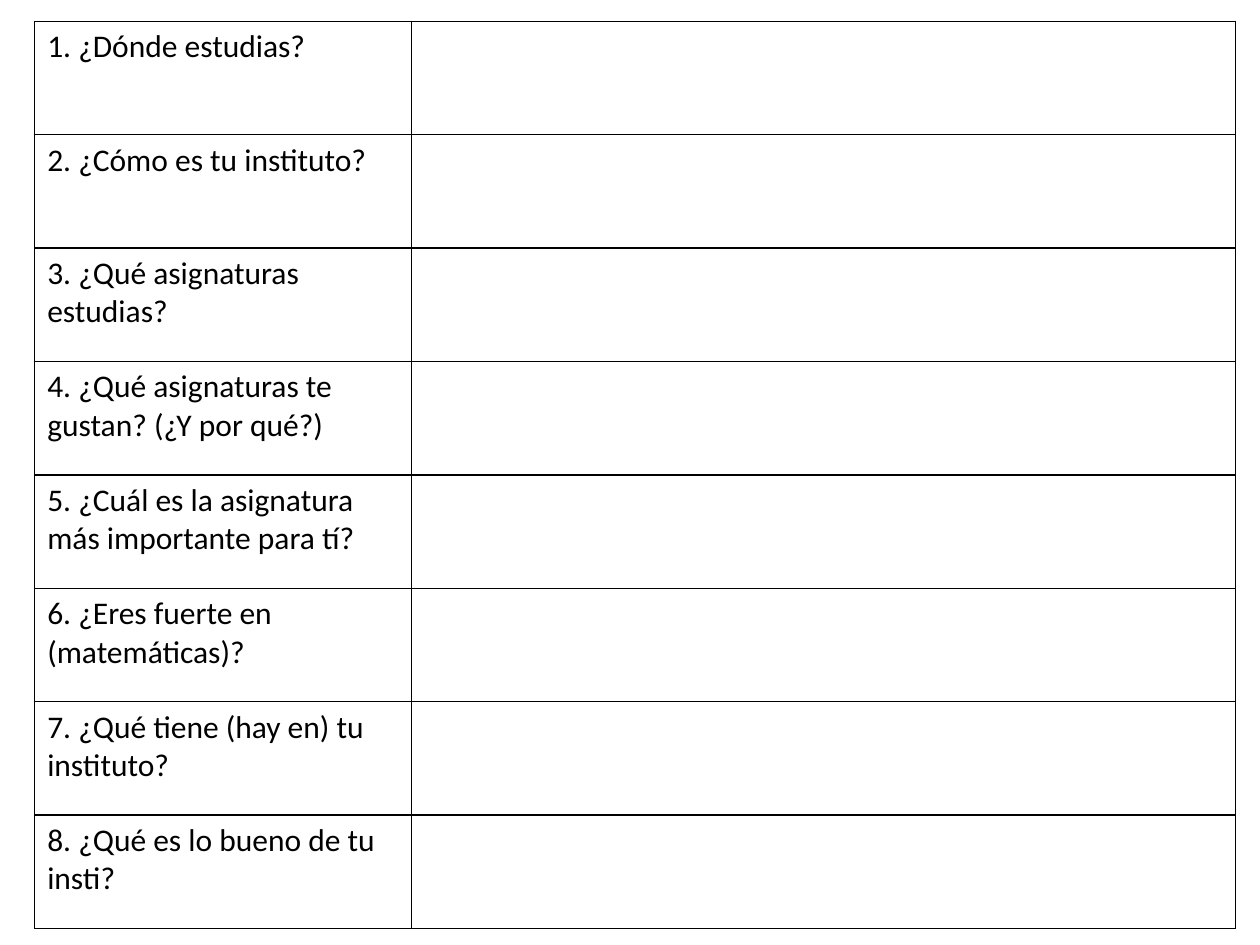
from lxml import etree
from pptx import Presentation
from pptx.dml.color import RGBColor
from pptx.oxml import ns
from pptx.util import Pt

HUES = {"ink": "000000", "paper": "FFFFFF"}
FONT = {"name": "Calibri", "size": Pt(18), "bold": False}
ASKS = [
    "¿Dónde estudias?",
    "¿Cómo es tu instituto?",
    "¿Qué asignaturas estudias?",
    "¿Qué asignaturas te gustan? (¿Y por qué?)",
    "¿Cuál es la asignatura más importante para tí?",
    "¿Eres fuerte en (matemáticas)?",
    "¿Qué tiene (hay en) tu instituto?",
    "¿Qué es lo bueno de tu insti?",
]
COLS = [Pt(215.3), Pt(470.9)]
HIGH = Pt(64.8)


def frame(cell):
    """Draw a thin line on all four sides of a cell."""
    props = cell._tc.get_or_add_tcPr()
    for spot, side in enumerate(("lnL", "lnR", "lnT", "lnB")):
        line = etree.Element(ns.qn(f"a:{side}"), w=str(Pt(1)))
        fill = etree.SubElement(line, ns.qn("a:solidFill"))
        etree.SubElement(fill, ns.qn("a:srgbClr"), val=HUES["ink"])
        props.insert(spot, line)


# Slide
prs = Presentation()
prs.slide_width, prs.slide_height = Pt(720), Pt(540)
slide = prs.slides.add_slide(prs.slide_layouts[6])

# Table: questions on the left, room for answers on the right
grid = slide.shapes.add_table(
    len(ASKS), len(COLS), Pt(19.8), Pt(12.2), sum(COLS), HIGH * len(ASKS)
).table
grid.first_row = grid.horz_banding = False
for col, wide in zip(grid.columns, COLS):
    col.width = wide
for row in grid.rows:
    row.height = HIGH

# Cell fills and borders
for cell in grid.iter_cells():
    cell.fill.solid()
    cell.fill.fore_color.rgb = RGBColor.from_string(HUES["paper"])
    frame(cell)

# Numbered questions
for num, ask in enumerate(ASKS):
    para = grid.cell(num, 0).text_frame.paragraphs[0]
    run = para.add_run()
    run.text = f"{num + 1}. {ask}"
    for key, val in FONT.items():
        setattr(run.font, key, val)
    run.font.color.rgb = RGBColor.from_string(HUES["ink"])

prs.save("out.pptx")
